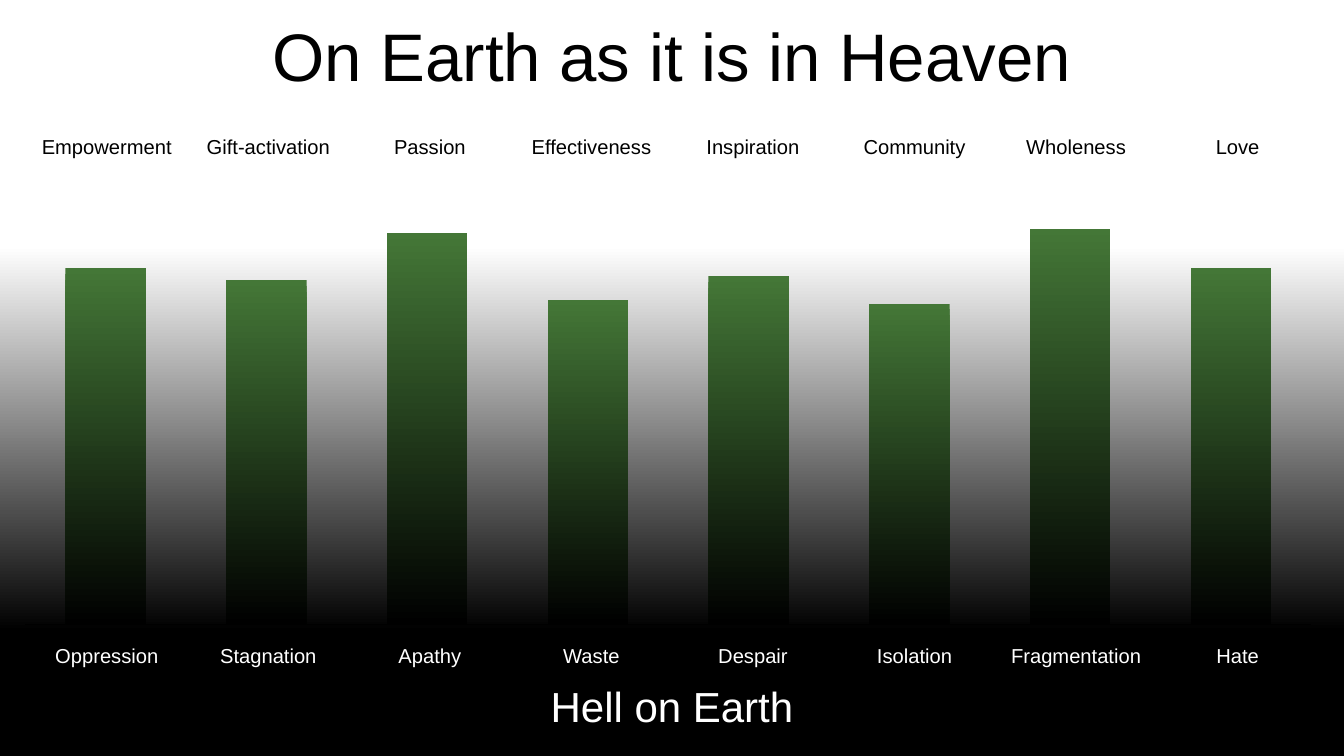
from dataclasses import dataclass

from lxml import etree
from pptx import Presentation
from pptx import util as u
from pptx.chart.data import CategoryChartData
from pptx.dml.color import RGBColor
from pptx.enum import chart as ch, shapes, text
from pptx.oxml.ns import qn


@dataclass(frozen=True)
class Theme:
    font: str = "Arial"
    light: str = "FFFFFF"
    dark: str = "000000"
    bar: str = "447737"
    title: float = 96
    subtitle: float = 60
    label: float = 28.8
    inset: float = 0.04


# heaven, hell, score
PAIRS = [
    ("Empowerment", "Oppression", 90),
    ("Gift-activation", "Stagnation", 87),
    ("Passion", "Apathy", 99),
    ("Effectiveness", "Waste", 82),
    ("Inspiration", "Despair", 88),
    ("Community", "Isolation", 81),
    ("Wholeness", "Fragmentation", 100),
    ("Love", "Hate", 90),
]


class Builder:
    """Draws on one slide; boxes are (left, top, width, height) in percent of it."""

    def __init__(self, prs, theme):
        self.prs, self.theme = prs, theme
        self.slide = prs.slides.add_slide(prs.slide_layouts[5])
        self.paint(self.slide.background.fill, theme.light)

    def place(self, box):
        sizes = (self.prs.slide_width, self.prs.slide_height) * 2
        return [round(share * size / 100) for share, size in zip(box, sizes)]

    def paint(self, fill, *colors):
        """One colour fills solid, two run from top to bottom."""
        if len(colors) == 1:
            fill.solid()
            fill.fore_color.rgb = RGBColor.from_string(colors[0])
            return
        fill.gradient()
        fill.gradient_angle = 270
        for stop, color in zip(fill.gradient_stops, colors):
            stop.color.rgb = RGBColor.from_string(color)

    def style(self, font, size, color):
        font.name, font.size = self.theme.font, u.Pt(size)
        font.color.rgb = RGBColor.from_string(color)

    def set_words(self, sp, words, size, color, spacing=0.9, wrap=True):
        tf = sp.text_frame
        tf.text = words
        tf.word_wrap = wrap
        tf.auto_size = text.MSO_AUTO_SIZE.SHAPE_TO_FIT_TEXT
        tf.vertical_anchor = text.MSO_ANCHOR.MIDDLE
        tf.margin_left = tf.margin_right = u.Inches(self.theme.inset)
        tf.margin_top = tf.margin_bottom = u.Inches(self.theme.inset)
        p = tf.paragraphs[0]
        p.alignment = text.PP_ALIGN.CENTER
        p.line_spacing = spacing
        p.space_before = u.Pt(0)
        self.style(p.runs[0].font, size, color)

    def title(self, box, words):
        sp = self.slide.shapes.title
        sp.left, sp.top, sp.width, sp.height = self.place(box)
        self.set_words(sp, words, self.theme.title, self.theme.dark, spacing=0.8)

    def label(self, box, words, size, color, wrap=True):
        sp = self.slide.shapes.add_textbox(*self.place(box))
        self.set_words(sp, words, size, color, wrap=wrap)

    def panel(self, box, *colors):
        sp = self.slide.shapes.add_shape(shapes.MSO_SHAPE.RECTANGLE, *self.place(box))
        sp.shadow.inherit = False
        sp.line.fill.background()
        self.paint(sp.fill, *colors)
        return sp

    def columns(self, box, names, values, plot):
        """Column chart; plot is the inner plot area as shares of the chart."""
        t = self.theme
        data = CategoryChartData()
        data.categories = names
        data.add_series("Series 1", values)
        chart = self.slide.shapes.add_chart(
            ch.XL_CHART_TYPE.COLUMN_CLUSTERED, *self.place(box), data).chart
        chart.has_legend = chart.has_title = False
        self.style(chart.font, t.label, t.dark)

        bars = chart.plots[0]
        bars.gap_width, bars.overlap, bars.vary_by_categories = 100, -10, False
        self.paint(bars.series[0].format.fill, t.bar, t.dark)

        for axis in (chart.category_axis, chart.value_axis):
            axis.has_major_gridlines = False
            axis.major_tick_mark = axis.minor_tick_mark = ch.XL_TICK_MARK.NONE
            axis.tick_label_position = ch.XL_TICK_LABEL_POSITION.NONE
        line = chart.category_axis.format.line
        line.width = u.Pt(1)
        line.color.rgb = RGBColor.from_string(t.dark)
        scale = chart.value_axis
        scale.minimum_scale, scale.maximum_scale, scale.major_unit = 0, 110, 28
        scale.format.line.fill.background()

        area = bars._element.getparent()
        layout = area.find(qn("c:layout"))
        if layout is None:
            layout = etree.Element(qn("c:layout"))
            area.insert(0, layout)
        manual = etree.SubElement(layout, qn("c:manualLayout"))
        settings = [("layoutTarget", "inner"), ("xMode", "edge"), ("yMode", "edge")]
        for tag, value in settings + list(zip("xywh", plot)):
            etree.SubElement(manual, qn(f"c:{tag}"), val=str(value))


def main():
    prs = Presentation()
    prs.slide_width, prs.slide_height = u.Inches(26.67), u.Inches(15)
    t = Theme()
    b = Builder(prs, t)
    heaven, hell, scores = zip(*PAIRS)

    b.title((10.42, 2.4, 79.15, 11.67), "On Earth as it is in Heaven")
    b.panel((0, 83.33, 100, 16.67), t.dark)
    b.panel((0, 32.5, 100, 50.95), t.light, t.dark)
    b.columns((0.9, 21.67, 97.64, 67), heaven, scores, (0.01, 0.05, 0.98, 0.86))
    b.label((39.7, 90, 20.6, 7.5), "Hell on Earth", t.subtitle, t.light, wrap=False)

    left, pitch, width, height = 2.21, 12.02, 11.47, 3.87
    for i, (good, bad) in enumerate(zip(heaven, hell)):
        x = left + i * pitch
        b.label((x, 17.67, width, height), good, t.label, t.dark)
        sp = b.panel((x, 85, width, height), t.dark)
        b.set_words(sp, bad, t.label, t.light)

    prs.save("out.pptx")


if __name__ == "__main__":
    main()
